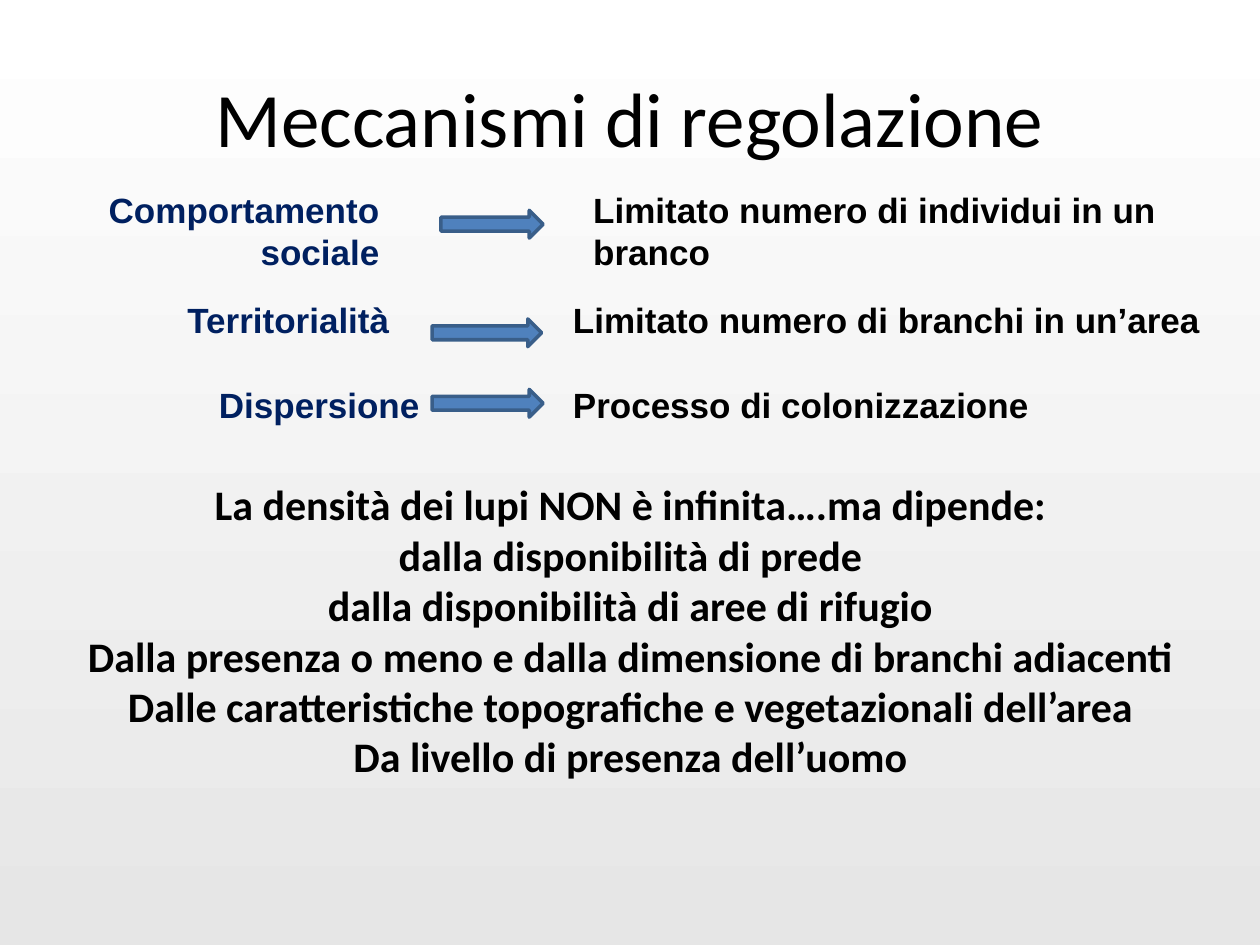
"""Build the slide on the mechanisms that regulate wolf density."""
from dataclasses import dataclass

from pptx import Presentation
from pptx.dml.color import RGBColor as RGB
from pptx.enum.shapes import MSO_SHAPE as Preset
from pptx.enum.text import MSO_ANCHOR as Anchor, PP_ALIGN as Align
from pptx.util import Cm, Pt

TITLE = "Meccanismi di regolazione"
MECHANISMS = [
    {"top": 3.68, "cause": ("Comportamento sociale", 7.19),
     "arrow": (8.89, 4.24, 2.06),
     "effect": ("Limitato numero di individui in un branco", 11.71, 13.77)},
    {"top": 5.89, "cause": ("Territorialità", 7.39),
     "arrow": (8.71, 6.43, 2.21),
     "effect": ("Limitato numero di branchi in un’area", 11.3, 13.74)},
    {"top": 7.6, "cause": ("Dispersione", 8),
     "arrow": (8.71, 7.85, 2.24),
     "effect": ("Processo di colonizzazione", 11.3, 11.61)},
]
DENSITY_FACTORS = [
    "La densità dei lupi NON è infinita….ma dipende:",
    "dalla disponibilità di prede",
    "dalla disponibilità di aree di rifugio",
    "Dalla presenza o meno e dalla dimensione di branchi adiacenti",
    "Dalle caratteristiche topografiche e vegetazionali dell’area",
    "Da livello di presenza dell’uomo",
]
LEFT, ROW_HEIGHT, ARROW_HEIGHT = 0.71, 1.09, 0.56


@dataclass(frozen=True)
class Theme:
    text: RGB = RGB(0, 0, 0)
    cause: RGB = RGB(0x00, 0x20, 0x60)
    arrow: RGB = RGB(0x4F, 0x81, 0xBD)
    arrow_line: RGB = RGB(0x39, 0x5E, 0x89)
    background: tuple = (RGB(0xFF, 0xFF, 0xFF), RGB(0xE6, 0xE6, 0xE6))
    title_size: int = 44
    row_size: int = 20
    body_size: int = 24
    row_font: str = "Arial"
    body_font: str = "Calibri"


THEME = Theme()


def place(shape, left, top, width, height):
    shape.left, shape.top = Cm(left), Cm(top)
    shape.width, shape.height = Cm(width), Cm(height)


def write(frame, lines, name, size, color, align, bold=True):
    frame.word_wrap = True
    frame.text = "\n".join(lines)
    for paragraph in frame.paragraphs:
        paragraph.alignment = align
        font = paragraph.font
        font.name, font.size, font.bold = name, Pt(size), bold
        font.color.rgb = color


def add_text(slide, box, *style):
    shape = slide.shapes.add_textbox(*map(Cm, box))
    write(shape.text_frame, *style)


def add_arrow(slide, left, top, width):
    box = map(Cm, (left, top, width, ARROW_HEIGHT))
    shape = slide.shapes.add_shape(Preset.RIGHT_ARROW, *box)
    shape.shadow.inherit = False
    shape.fill.solid()
    shape.fill.fore_color.rgb = THEME.arrow
    shape.line.color.rgb = THEME.arrow_line
    shape.line.width = Pt(2)


def main():
    presentation = Presentation()
    presentation.slide_width, presentation.slide_height = Cm(25.4), Cm(19.05)
    slide = presentation.slides.add_slide(presentation.slide_layouts[5])

    fill = slide.background.fill
    fill.gradient()
    fill.gradient_angle = 270
    for stop, color in zip(fill.gradient_stops, THEME.background):
        stop.color.rgb = color

    title = slide.shapes.title
    place(title, 1.27, 0.76, 22.86, 3.18)
    title.text_frame.vertical_anchor = Anchor.MIDDLE
    write(title.text_frame, [TITLE], THEME.body_font, THEME.title_size,
          THEME.text, Align.CENTER, False)

    for row in MECHANISMS:
        cause, cause_width = row["cause"]
        effect, effect_left, effect_width = row["effect"]
        add_text(slide, (LEFT, row["top"], cause_width, ROW_HEIGHT), [cause],
                 THEME.row_font, THEME.row_size, THEME.cause, Align.RIGHT)
        add_text(slide, (effect_left, row["top"], effect_width, ROW_HEIGHT), [effect],
                 THEME.row_font, THEME.row_size, THEME.text, Align.LEFT)
        add_arrow(slide, *row["arrow"])

    add_text(slide, (LEFT, 9.53, 24, 6.81), DENSITY_FACTORS,
             THEME.body_font, THEME.body_size, THEME.text, Align.CENTER)
    presentation.save("out.pptx")


if __name__ == "__main__":
    main()
